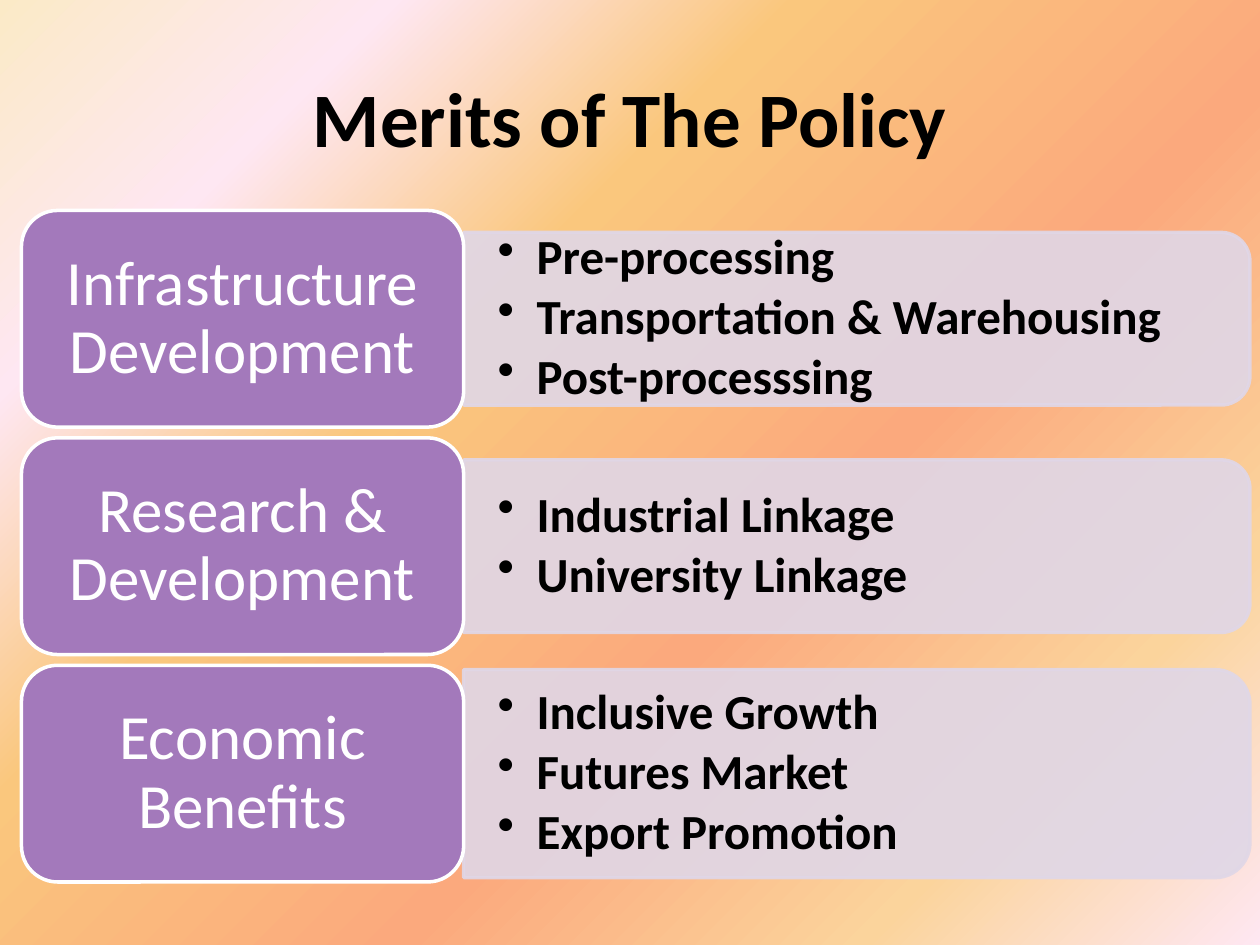
from lxml import etree
from pptx import Presentation
from pptx.dml.color import RGBColor
from pptx.enum.shapes import MSO_SHAPE
from pptx.enum.text import MSO_ANCHOR, PP_ALIGN
from pptx.oxml.ns import qn
from pptx.util import Inches, Pt

ROUNDED, ROUNDED_END = MSO_SHAPE.ROUNDED_RECTANGLE, MSO_SHAPE.ROUND_2_SAME_RECTANGLE
MIDDLE, LEFT, CENTER = MSO_ANCHOR.MIDDLE, PP_ALIGN.LEFT, PP_ALIGN.CENTER

THEME = {
    "background": [(0, "FBEAC7"), (18, "FEE7F2"), (36, "FAC77D"),
                   (61, "FBA97D"), (82, "FBD49C"), (100, "FEE7F2")],
    "card": "A379BB",
    "card_line": "FFFFFF",
    "bar": "E0D7E7",
    "bar_opacity": 90,
    "line_width": Pt(2),
    "title": {"size": Pt(44), "bold": True, "color": "000000"},
    "label": {"size": Pt(36), "bold": False, "color": "FFFFFF"},
    "merit": {"size": Pt(28), "bold": True, "color": "000000"},
    "font": "Calibri",
}

# Label, bar height in inches, merits
MERIT_GROUPS = [
    ("Infrastructure Development", 1.37,
     ["Pre-processing", "Transportation & Warehousing", "Post-processsing"]),
    ("Research & Development", 1.37, ["Industrial Linkage", "University Linkage"]),
    ("Economic Benefits", 1.65, ["Inclusive Growth", "Futures Market", "Export Promotion"]),
]
CARD_LEFT, CARD_TOP, CARD_WIDTH, CARD_HEIGHT = 0.17, 1.67, 3.51, 1.72
ROW_PITCH = 1.805
BAR_LEFT, BAR_WIDTH = CARD_LEFT + CARD_WIDTH, 6.24


def write_text(frame, lines, style, align, margins):
    frame.word_wrap = True
    frame.vertical_anchor = MIDDLE
    side, edge = (Inches(margin) for margin in margins)
    frame.margin_left = frame.margin_right = side
    frame.margin_top = frame.margin_bottom = edge
    for index, line in enumerate(lines):
        paragraph = frame.add_paragraph() if index else frame.paragraphs[0]
        paragraph.alignment = align
        run = paragraph.add_run()
        run.text = line
        for name, value in {"name": THEME["font"], "size": style["size"],
                            "bold": style["bold"]}.items():
            setattr(run.font, name, value)
        run.font.color.rgb = RGBColor.from_string(style["color"])


def paint(shape, fill, line):
    shape.shadow.inherit = False
    shape.fill.solid()
    shape.fill.fore_color.rgb = RGBColor.from_string(fill)
    shape.line.color.rgb = RGBColor.from_string(line)
    shape.line.width = THEME["line_width"]


prs = Presentation()
prs.slide_width, prs.slide_height = Inches(10), Inches(7.5)
slide = prs.slides.add_slide(prs.slide_layouts[5])

background = slide.background.fill
background.gradient()
background.gradient_angle = 315
stops = slide.element.find(".//" + qn("a:gsLst"))
for default_stop in list(stops):
    stops.remove(default_stop)
for position, color in THEME["background"]:
    stop = etree.SubElement(stops, qn("a:gs"), pos=str(position * 1000))
    etree.SubElement(stop, qn("a:srgbClr"), val=color)

title = slide.shapes.title
title.left, title.top, title.width, title.height = map(Inches, (0.5, 0.3, 9, 1.25))
write_text(title.text_frame, ["Merits of The Policy"], THEME["title"], CENTER, (0.1, 0.05))

for row, (label, bar_height, merits) in enumerate(MERIT_GROUPS):
    card_top = CARD_TOP + row * ROW_PITCH
    middle = card_top + CARD_HEIGHT / 2

    # The bar is an upright shape turned a quarter so its round corners face right
    bar = slide.shapes.add_shape(
        ROUNDED_END,
        Inches(BAR_LEFT + (BAR_WIDTH - bar_height) / 2), Inches(middle - BAR_WIDTH / 2),
        Inches(bar_height), Inches(BAR_WIDTH))
    bar.rotation = 90
    paint(bar, THEME["bar"], THEME["bar"])
    for color in bar._element.spPr.iter(qn("a:srgbClr")):
        etree.SubElement(color, qn("a:alpha"), val=str(THEME["bar_opacity"] * 1000))

    merits_height = bar_height - 0.14
    merit_list = slide.shapes.add_textbox(
        Inches(BAR_LEFT), Inches(middle - merits_height / 2),
        Inches(BAR_WIDTH - 0.07), Inches(merits_height))
    write_text(merit_list.text_frame, merits, THEME["merit"], LEFT, (0.27, 0.14))
    for paragraph in merit_list.text_frame.paragraphs:
        paragraph.line_spacing = 0.9
        paragraph.space_after = Pt(4)
        properties = paragraph._p.get_or_add_pPr()
        properties.set("marL", str(Inches(0.31)))
        properties.set("indent", str(Inches(-0.31)))
        etree.SubElement(properties, qn("a:buChar"), char="•")

    card = slide.shapes.add_shape(
        ROUNDED, Inches(CARD_LEFT), Inches(card_top), Inches(CARD_WIDTH), Inches(CARD_HEIGHT))
    paint(card, THEME["card"], THEME["card_line"])
    write_text(card.text_frame, [label], THEME["label"], CENTER, (0.15, 0.07))
    card.text_frame.paragraphs[0].line_spacing = 0.9

prs.save("out.pptx")
